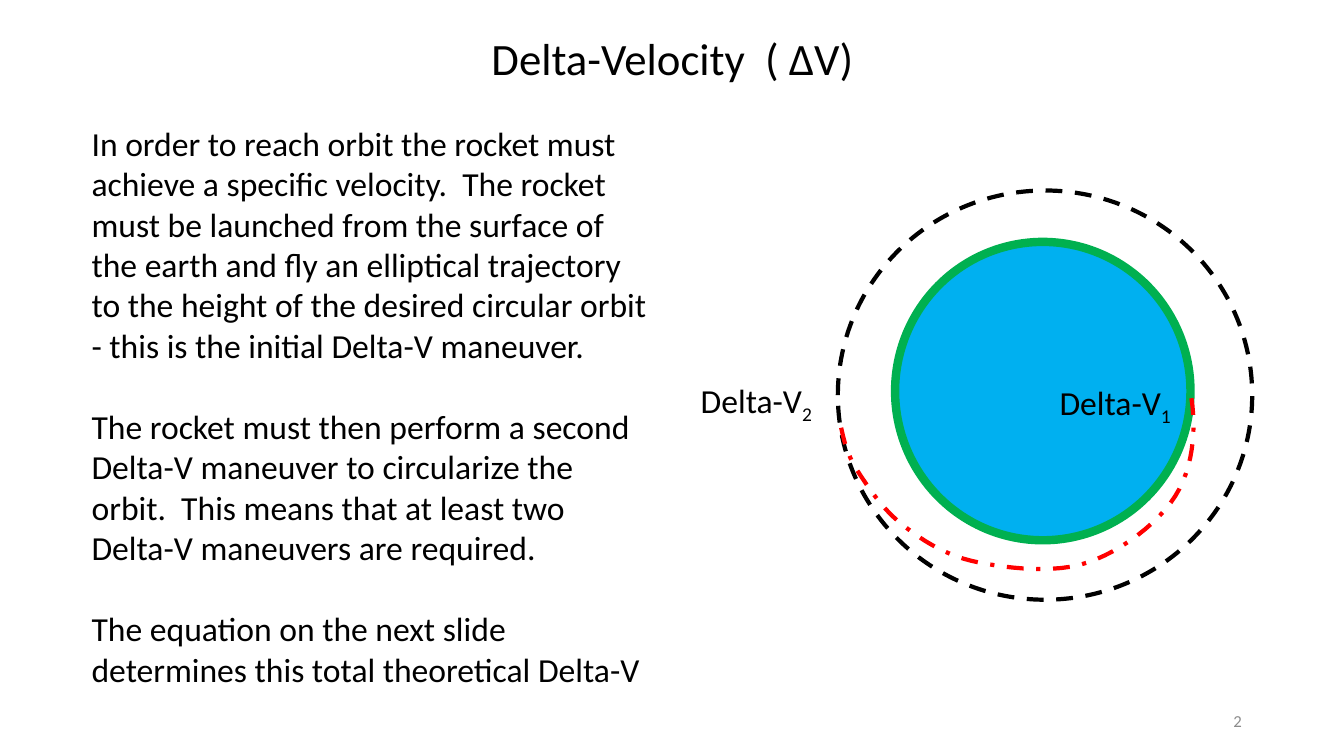
import pptx
import pptx.util
import pptx.dml.color
import pptx.enum.dml
import pptx.enum.shapes
import pptx.enum.text

Pt = pptx.util.Pt
RGB = pptx.dml.color.RGBColor
Dash = pptx.enum.dml.MSO_LINE
Align = pptx.enum.text.PP_ALIGN
Anchor = pptx.enum.text.MSO_ANCHOR

BLACK = RGB(0x00, 0x00, 0x00)
GRAY = RGB(0x8C, 0x8C, 0x8C)
BLUE = RGB(0x00, 0xB0, 0xF0)
GREEN = RGB(0x00, 0xB0, 0x50)
RED = RGB(0xFF, 0x00, 0x00)

WIDE = pptx.util.Inches(13.333)
HIGH = pptx.util.Inches(7.5)

STORY = [
    "In order to reach orbit the rocket must achieve a specific velocity.  "
    "The rocket must be launched from the surface of the earth and fly an "
    "elliptical trajectory to the height of the desired circular orbit "
    "- this is the initial Delta-V maneuver.",
    "The rocket must then perform a second Delta-V maneuver to circularize "
    "the orbit.  This means that at least two Delta-V maneuvers are required.",
    "The equation on the next slide determines this total theoretical Delta-V",
]

START = (88.65, 52.67)
CURVES = [
    ((89.03, 57.07), (88.73, 62), (87.45, 65.6)),
    ((86.18, 69.2), (83.4, 72.93), (80.93, 74.4)),
    ((78.53, 75.87), (75.08, 75.2), (72.83, 74.4)),
    ((70.5, 73.6), (68.7, 71.6), (67.2, 69.47)),
    ((65.7, 67.47), (64.58, 64.4), (63.75, 62.13)),
    ((63, 60), (62.78, 58.13), (62.55, 56.27)),
]
STEPS = 12


def spot(x, y):
    return round(WIDE * x / 100), round(HIGH * y / 100)


def area(x, y, w, h):
    return spot(x, y) + spot(w, h)


def style(run, size, color):
    run.font.name = "Calibri"
    run.font.size = Pt(size)
    run.font.color.rgb = color


def write(shape, *texts, size=24, color=BLACK, align=Align.LEFT,
          anchor=Anchor.TOP, gap=0, sub=None):
    frame = shape.text_frame
    frame.word_wrap = True
    frame.vertical_anchor = anchor
    for i, text in enumerate(texts):
        para = frame.add_paragraph() if i else frame.paragraphs[0]
        para.alignment = align
        para.space_before = Pt(gap if i else 0)
        run = para.add_run()
        run.text = text
        style(run, size, color)
        if sub:
            low = para.add_run()
            low.text = sub
            style(low, size, color)
            low.font._element.set("baseline", "-25000")


def add_text(slide, place, *texts, **look):
    write(slide.shapes.add_textbox(*area(*place)), *texts, **look)


def draw(shape, color, width, dash=None, fill=None):
    shape.shadow.inherit = False
    if fill is None:
        shape.fill.background()
    else:
        shape.fill.solid()
        shape.fill.fore_color.rgb = fill
    shape.line.color.rgb = color
    shape.line.width = Pt(width)
    if dash:
        shape.line.dash_style = dash


def add_disc(slide, place, *args, **look):
    oval = pptx.enum.shapes.MSO_SHAPE.OVAL
    draw(slide.shapes.add_shape(oval, *area(*place)), *args, **look)


def bend(a, b, c, d, t):
    s = 1 - t
    return tuple(s**3 * p + 3 * s * s * t * q + 3 * s * t * t * r + t**3 * e
                 for p, q, r, e in zip(a, b, c, d))


def add_curve(slide, start, curves, *args, **look):
    points = []
    last = start
    for b, c, d in curves:
        points += [spot(*bend(last, b, c, d, i / STEPS))
                   for i in range(1, STEPS + 1)]
        last = d
    pen = slide.shapes.build_freeform(*spot(*start))
    pen.add_line_segments(points, close=False)
    draw(pen.convert_to_shape(), *args, **look)


def main():
    deck = pptx.Presentation()
    deck.slide_width, deck.slide_height = WIDE, HIGH
    slide = deck.slides.add_slide(deck.slide_layouts[5])

    title = slide.shapes.title
    title.left, title.top, title.width, title.height = area(28.6, 3.33, 42.9, 8.53)
    write(title, "Delta-Velocity  ( ∆V)", size=32, align=Align.CENTER)

    add_text(slide, (70.65, 92.67, 22.5, 5.33), "2", size=12, color=GRAY,
             align=Align.RIGHT, anchor=Anchor.MIDDLE)
    add_text(slide, (6.08, 15.6, 42.9, 76.8), *STORY, gap=29.3)

    add_disc(slide, (66.6, 32, 21.98, 39.47), GREEN, 6, fill=BLUE)
    add_disc(slide, (62.34, 25.2, 30.83, 54.13), BLACK, 3, dash=Dash.DASH)
    add_curve(slide, START, CURVES, RED, 3, dash=Dash.DASH_DOT)
    for sub, x, y in (("1", 78.1, 49.87), ("2", 51.4, 49.6)):
        add_text(slide, (x, y, 13, 6.13), "Delta-V", sub=sub)

    deck.save("out.pptx")


if __name__ == "__main__":
    main()
